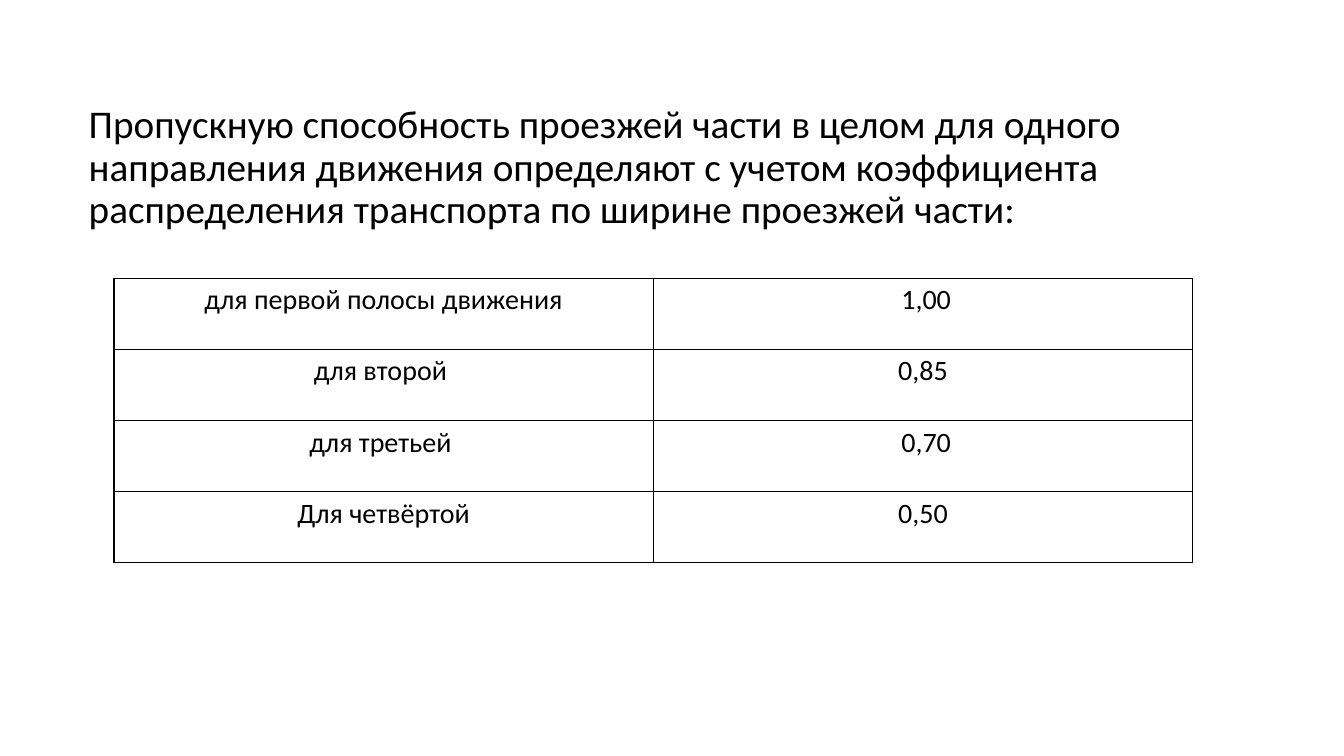
from dataclasses import dataclass

from lxml.etree import SubElement
from pptx import Presentation
from pptx.dml.color import RGBColor
from pptx.enum.text import MSO_ANCHOR, MSO_AUTO_SIZE, PP_ALIGN
from pptx.oxml.ns import qn
from pptx.util import Inches, Pt


@dataclass(frozen=True)
class Theme:
    """Colours, font and type sizes of the slide."""
    ink: RGBColor = RGBColor(0, 0, 0)
    font: str = "Calibri"
    body_size: int = 28
    table_size: int = 20
    border_width: int = 1


THEME = Theme()
INTRODUCTION = (
    "Пропускную способность проезжей части в целом для одного направления "
    "движения определяют с учетом коэффициента распределения транспорта "
    "по ширине проезжей части:"
)
LANE_FACTORS = [
    ("для первой полосы движения", " 1,00"),
    ("для второй ", "0,85"),
    ("для третьей ", " 0,70"),
    ("Для четвёртой", "0,50"),
]


def set_attributes(target, values):
    """Set each named attribute of the target."""
    for name, value in values.items():
        setattr(target, name, value)


def format_font(font, size):
    """Apply the theme font, colour and given size."""
    set_attributes(font, {"name": THEME.font, "size": Pt(size)})
    font.color.rgb = THEME.ink


def add_body(slide, text):
    """Place the introduction in the body placeholder without a bullet."""
    shape = slide.placeholders[1]
    set_attributes(shape, {
        "left": Inches(0.78), "top": Inches(0.42),
        "width": Inches(11.64), "height": Inches(6.35),
    })
    frame = shape.text_frame
    frame.text = text
    set_attributes(frame, {
        "word_wrap": True, "auto_size": MSO_AUTO_SIZE.NONE,
        "vertical_anchor": MSO_ANCHOR.TOP, "margin_top": Inches(0.62),
    })
    paragraph = frame.paragraphs[0]
    properties = paragraph._p.get_or_add_pPr()
    properties.set("marL", "0")
    properties.set("indent", "0")
    SubElement(properties, qn("a:buNone"))
    set_attributes(paragraph, {
        "alignment": PP_ALIGN.LEFT, "line_spacing": 0.9, "space_before": Pt(0),
    })
    format_font(paragraph.runs[0].font, THEME.body_size)


def add_borders(cell):
    """Draw a solid line on every side of the cell."""
    properties = cell._tc.get_or_add_tcPr()
    for side in ("lnL", "lnR", "lnT", "lnB"):
        line = SubElement(properties, qn(f"a:{side}"), w=str(Pt(THEME.border_width)))
        fill = SubElement(line, qn("a:solidFill"))
        SubElement(fill, qn("a:srgbClr"), val=str(THEME.ink))


def fill_cell(cell, text):
    """Write centred text in a bordered cell with no fill."""
    cell.text = text
    paragraph = cell.text_frame.paragraphs[0]
    paragraph.alignment = PP_ALIGN.CENTER
    format_font(paragraph.runs[0].font, THEME.table_size)
    add_borders(cell)
    cell.fill.background()


def add_factor_table(slide, rows):
    """Add the table of lane factors."""
    table = slide.shapes.add_table(
        len(rows), len(rows[0]),
        Inches(1.13), Inches(2.76), Inches(10.7), Inches(2.82),
    ).table
    set_attributes(table, {"first_row": False, "horz_banding": False})
    for row_index, row in enumerate(rows):
        for column_index, text in enumerate(row):
            fill_cell(table.cell(row_index, column_index), text)


def main():
    """Build and save the slide."""
    presentation = Presentation()
    set_attributes(presentation, {
        "slide_width": Inches(13.33), "slide_height": Inches(7.5),
    })
    slide = presentation.slides.add_slide(presentation.slide_layouts[1])
    title = slide.shapes.title.element
    title.getparent().remove(title)
    add_body(slide, INTRODUCTION)
    add_factor_table(slide, LANE_FACTORS)
    presentation.save("out.pptx")


if __name__ == "__main__":
    main()
